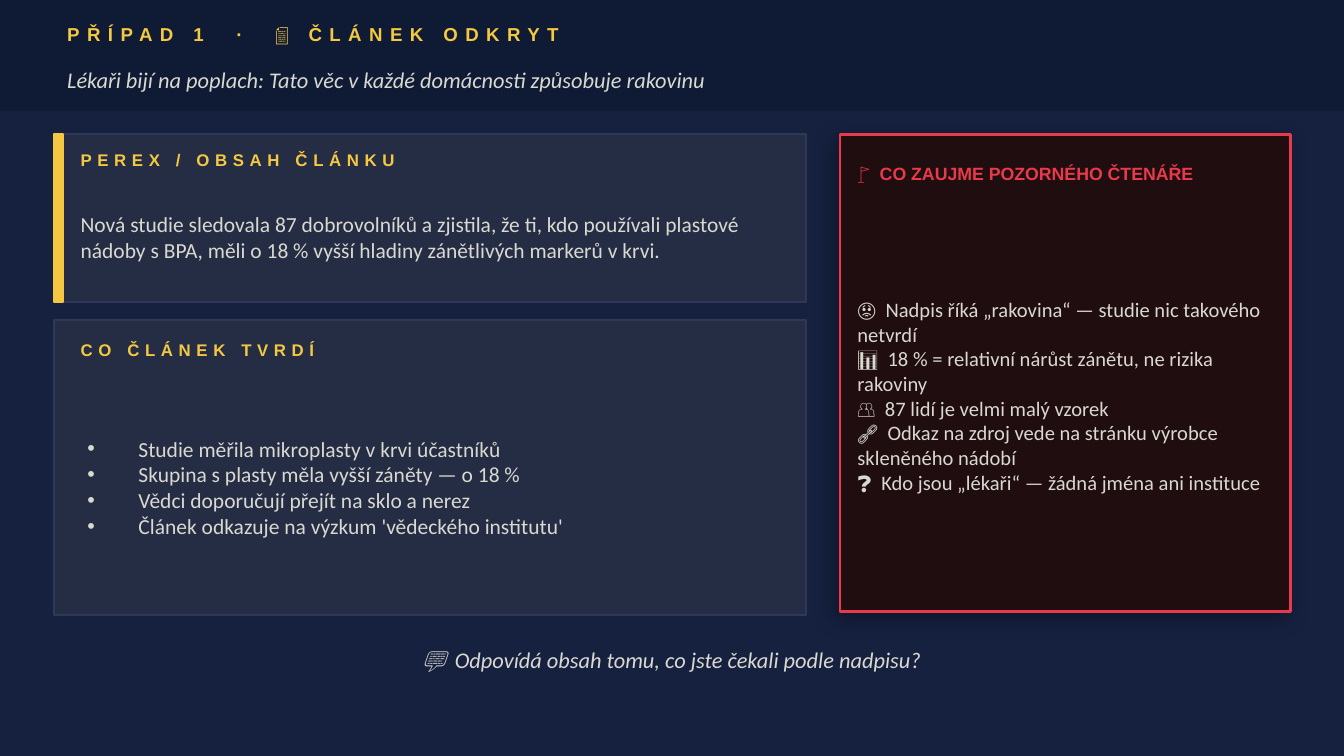
"""Build the slide that uncovers the article of case 1."""
from lxml import etree
from pptx import Presentation, util as u
from pptx.dml.color import RGBColor
from pptx.enum import shapes, text
from pptx.oxml.ns import qn

GOLD, PALE, RED = "F5C842", "D9D9D0", "E83A4B"
NAVY, PANEL, EDGE = "0F1B35", "252D45", "2E3857"

deck = Presentation()
deck.slide_width = u.Inches(10)
deck.slide_height = deck.slide_width * 9 // 16
cell = deck.slide_width / 100
slide = deck.slides.add_slide(deck.slide_layouts[3])
title, claims, flags = slide.placeholders


def paint(fill, tint):
    fill.solid()
    fill.fore_color.rgb = RGBColor.from_string(tint)


def write(box, spot, lines, size, tint=PALE, face="Calibri", bold=False,
          slant=False, space=0, bullet=False, align=text.PP_ALIGN.LEFT):
    box.left, box.top, box.width, box.height = [int(n * cell) for n in spot]
    box.element.getparent().append(box.element)
    frame = box.text_frame
    frame.text = lines
    frame.word_wrap, frame.auto_size = True, text.MSO_AUTO_SIZE.NONE
    frame.vertical_anchor = text.MSO_ANCHOR.MIDDLE
    frame.margin_left = frame.margin_right = 0
    frame.margin_top = frame.margin_bottom = 0
    for para in frame.paragraphs:
        props = para._p.get_or_add_pPr()
        dent = u.Inches(0.38) if bullet else 0
        props.set("marL", str(dent))
        props.set("indent", str(-dent))
        if bullet:
            etree.SubElement(props, qn("a:buChar")).set("char", "•")
        else:
            etree.SubElement(props, qn("a:buNone"))
        para.alignment, para.space_before = align, u.Pt(0)
        for run in para.runs:
            font = run.font
            font.size, font.name, font.bold, font.italic = u.Pt(size), face, bold, slant
            paint(font.fill, tint)
            if space:
                run._r.get_or_add_rPr().set("spc", str(space * 100))


paint(slide.background.fill, "162140")

panels = [
    ((0, 0, 100, 8.2), NAVY, NAVY, 1),
    ((4, 10, 56, 12.5), PANEL, EDGE, 1),
    ((4, 10, 0.7, 12.5), GOLD, GOLD, 1),
    ((4, 23.8, 56, 22), PANEL, EDGE, 1),
    ((62.5, 10, 33.5, 35.5), "200D10", RED, 1.5),
]
for spot, fill, edge, width in panels:
    card = slide.shapes.add_shape(
        shapes.MSO_SHAPE.RECTANGLE, *[int(n * cell) for n in spot])
    card.shadow.inherit = False
    paint(card.fill, fill)
    paint(card.line.fill, edge)
    card.line.width = u.Pt(width)

glow = etree.SubElement(
    card.element.spPr.find(qn("a:effectLst")), qn("a:outerShdw"),
    blurRad=str(u.Pt(12)), dist=str(u.Pt(4)), dir=str(135 * 60000),
    algn="bl", rotWithShape="0")
shade = etree.SubElement(glow, qn("a:srgbClr"), val="000000")
etree.SubElement(shade, qn("a:alpha"), val="35000")

head = dict(tint=GOLD, face="Arial", bold=True)
write(title, (5, 0.8, 90, 3.5), "PŘÍPAD 1  ·  📄 ČLÁNEK ODKRYT", 10, space=4, **head)
write(claims, (6.5, 28, 51, 16.5), "\n".join([
    "Studie měřila mikroplasty v krvi účastníků",
    "Skupina s plasty měla vyšší záněty — o 18 %",
    "Vědci doporučují přejít na sklo a nerez",
    "Článek odkazuje na výzkum 'vědeckého institutu'",
]), 11.5, bullet=True)
write(flags, (63.8, 15.2, 31, 28.5), "\n".join([
    "😟  Nadpis říká „rakovina“ — studie nic takového netvrdí",
    "📊  18 % = relativní nárůst zánětu, ne rizika rakoviny",
    "👥  87 lidí je velmi malý vzorek",
    "🔗  Odkaz na zdroj vede na stránku výrobce skleněného nádobí",
    "❓  Kdo jsou „lékaři“ — žádná jména ani instituce",
]), 11)

notes = [
    ((5, 4.2, 90, 3.5),
     "Lékaři bijí na poplach: Tato věc v každé domácnosti způsobuje rakovinu",
     12, dict(slant=True)),
    ((6, 10.5, 52, 2.8), "PEREX / OBSAH ČLÁNKU", 9, dict(head, space=3)),
    ((6, 13.5, 52, 8.2),
     "Nová studie sledovala 87 dobrovolníků a zjistila, že ti, kdo používali "
     "plastové nádoby s BPA, měli o 18 % vyšší hladiny zánětlivých markerů v krvi.",
     11.5, {}),
    ((6, 24.5, 52, 3), "CO ČLÁNEK TVRDÍ", 9, dict(head, space=3)),
    ((63.8, 10.8, 31, 4.2), "🚩  CO ZAUJME POZORNÉHO ČTENÁŘE", 9.5,
     dict(head, tint=RED)),
    ((5, 47.3, 90, 3.5), "💬  Odpovídá obsah tomu, co jste čekali podle nadpisu?",
     12, dict(slant=True, align=text.PP_ALIGN.CENTER)),
]
for spot, words, size, style in notes:
    write(slide.shapes.add_textbox(0, 0, 0, 0), spot, words, size, **style)

deck.save("out.pptx")
